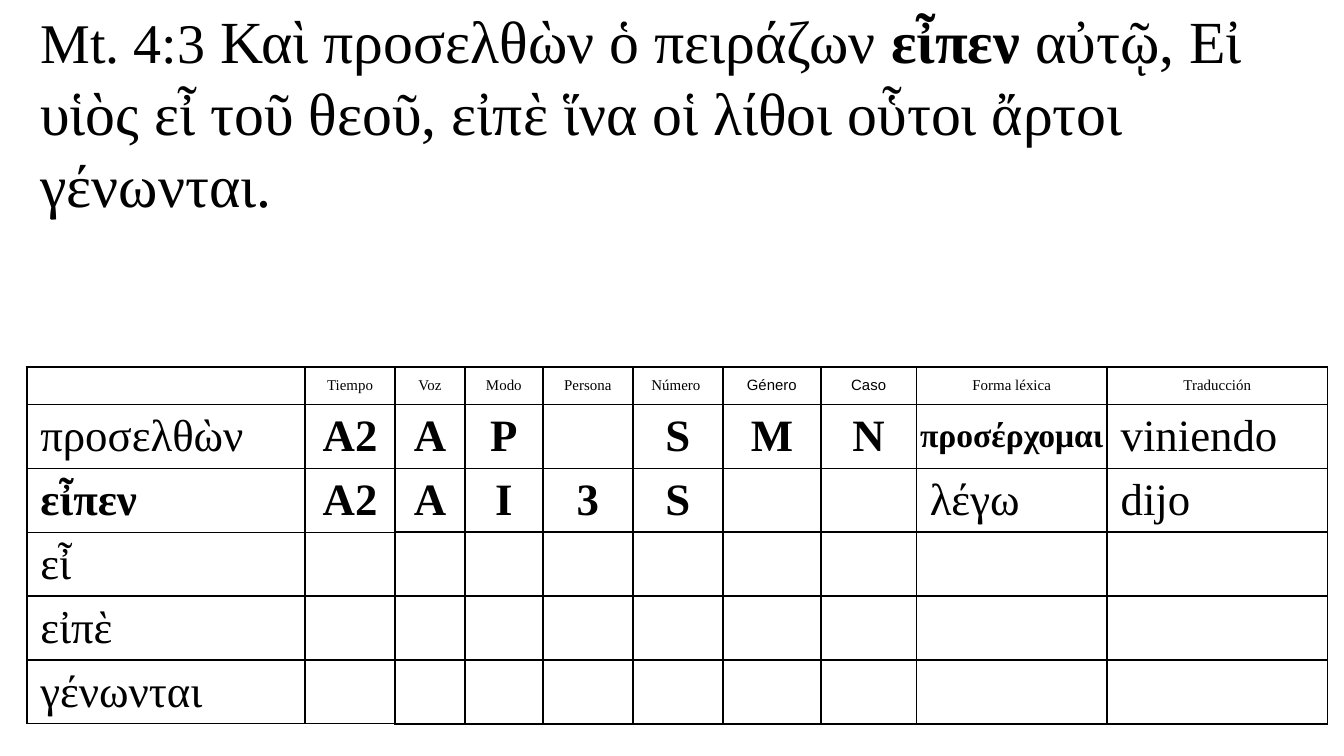
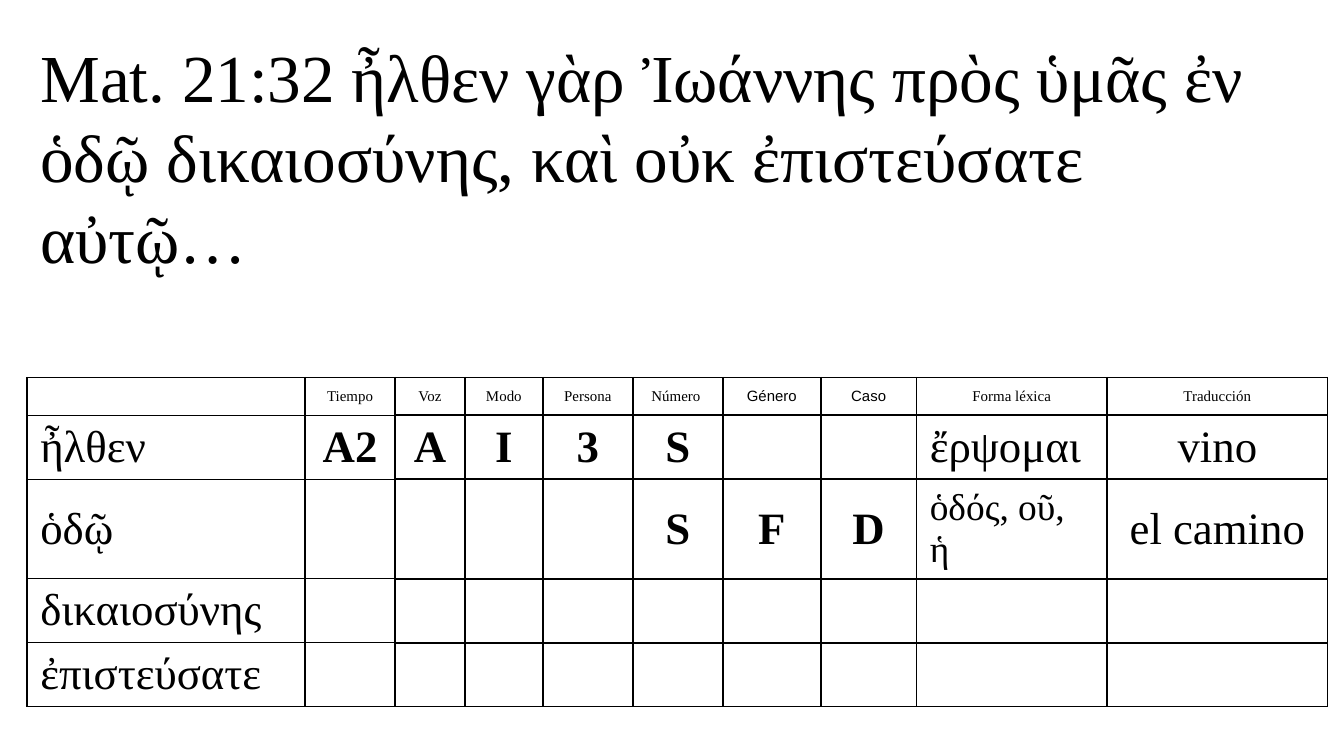
import pptx
import pptx.dml.color
import pptx.enum.text
import pptx.util
from lxml import etree
from pptx.enum.text import MSO_ANCHOR, MSO_AUTO_SIZE, PP_ALIGN
from pptx.util import Inches, Pt

SERIF, SANS = "Times New Roman", "Arial"
BLACK = "000000"
NAMESPACE = "{http://schemas.openxmlformats.org/drawingml/2006/main}"
COLUMN_WIDTHS = [2.07, 0.67, 0.52, 0.58, 0.67, 0.67, 0.73, 0.71, 1.42, 1.64]
HEADINGS = ["", "Tiempo", "Voz", "Modo", "Persona", "Número ", "Género", "Caso",
            "Forma léxica", "Traducción"]
SANS_HEADINGS = ["Género", "Caso"]
PARSING_COLUMNS = range(1, 8)
TRANSLATION = 9
TIGHT_WORD = "προσέρχομαι "
BOLD_WORDS = ["εἶπεν", TIGHT_WORD]
WORD_SIZES = {TIGHT_WORD: 18, "ὁδός, οῦ, ἡ": 20}

# Verse spans are (text, size, bold); each table row has one entry per column.
verses = [
    {
        "top": -0.02, "height": 1.72,
        "spans": [
            ("Mt. 4:3", 30, False),
            (" Καὶ προσελθὼν ὁ πειράζων ", 32, False),
            ("εἶπεν", 32, True),
            (" αὐτῷ, Εἰ υἱὸς εἶ τοῦ θεοῦ, εἰπὲ ἵνα οἱ λίθοι οὗτοι ἄρτοι γένωνται.",
             32, False),
        ],
        "table_top": 2.73, "table_height": 2.65,
        "row_heights": [0.28, 0.45, 0.43, 0.43, 0.43, 0.43],
        "translation_align": PP_ALIGN.LEFT,
        "words": [
            ["προσελθὼν", "A2", "A", "P", "", "S", "M", "N", TIGHT_WORD, "viniendo"],
            ["εἶπεν", "A2", "A", "I", "3", "S", "", "", "λέγω", "dijo"],
            ["εἶ"] + [""] * 9,
            ["εἰπὲ"] + [""] * 9,
            ["γένωνται"] + [""] * 9,
        ],
    },
    {
        "top": 0.21, "height": 1.31,
        "spans": [
            ("Mat. 21:32 ἦλθεν γὰρ Ἰωάννης πρὸς ὑμᾶς ἐν ὁδῷ δικαιοσύνης, "
             "καὶ οὐκ ἐπιστεύσατε αὐτῷ…", 36, False),
        ],
        "table_top": 2.81, "table_height": 2.17,
        "row_heights": [0.28, 0.45, 0.45, 0.43, 0.43],
        "translation_align": PP_ALIGN.CENTER,
        "words": [
            ["ἦλθεν", "A2", "A", "I", "3", "S", "", "", "ἔρψομαι", "vino"],
            ["ὁδῷ", "", "", "", "", "S", "F", "D", "ὁδός, οῦ, ἡ", "el camino"],
            ["δικαιοσύνης"] + [""] * 9,
            ["ἐπιστεύσατε"] + [""] * 9,
        ],
    },
]


def format_span(span, size, bold=False, font=SERIF, color=BLACK):
    span.font.name = font
    span.font.size = Pt(size)
    span.font.bold = bold
    span.font.color.rgb = pptx.dml.color.RGBColor.from_string(color)


def add_border(cell, side, width, color=BLACK):
    """Draw one side (L, R, T or B) of a cell; call before setting its fill."""
    properties = cell._tc.get_or_add_tcPr()
    line = etree.SubElement(properties, NAMESPACE + "ln" + side, w=str(int(Pt(width))))
    fill = etree.SubElement(line, NAMESPACE + "solidFill")
    etree.SubElement(fill, NAMESPACE + "srgbClr", val=color)


deck = pptx.Presentation()
deck.slide_width = Inches(10)
deck.slide_height = Inches(10) * 9 // 16

for verse in verses:
    page = deck.slides.add_slide(deck.slide_layouts[5])

    box = page.shapes.title
    box.left, box.top = Inches(0.2), Inches(verse["top"])
    box.width, box.height = Inches(9.61), Inches(verse["height"])
    frame = box.text_frame
    frame.word_wrap = True
    frame.auto_size = MSO_AUTO_SIZE.SHAPE_TO_FIT_TEXT
    frame.vertical_anchor = MSO_ANCHOR.TOP
    para = frame.paragraphs[0]
    para.alignment = PP_ALIGN.LEFT
    for text, size, bold in verse["spans"]:
        span = para.add_run()
        span.text = text
        format_span(span, size, bold)

    rows = [HEADINGS] + verse["words"]
    holder = page.shapes.add_table(
        len(rows), len(COLUMN_WIDTHS), Inches(0.2), Inches(verse["table_top"]),
        Inches(sum(COLUMN_WIDTHS)), Inches(verse["table_height"]))
    table = holder.table
    table.first_row = False
    table.horz_banding = False
    for column, width in zip(table.columns, COLUMN_WIDTHS):
        column.width = Inches(width)
    for row, height in zip(table.rows, verse["row_heights"]):
        row.height = Inches(height)
    holder.height = Inches(verse["table_height"])

    for row_index, texts in enumerate(rows):
        is_heading = row_index == 0
        for column_index, text in enumerate(texts):
            cell = table.cell(row_index, column_index)
            is_parsing = column_index in PARSING_COLUMNS
            inner_width = 0.75 if column_index < 2 else 1
            add_border(cell, "L", 1)
            add_border(cell, "R", 1)
            add_border(cell, "T", 1 if is_heading else inner_width)
            add_border(cell, "B", inner_width)
            cell.fill.background()
            cell.vertical_anchor = MSO_ANCHOR.MIDDLE
            cell.margin_left = cell.margin_right = Inches(0 if text == TIGHT_WORD else 0.1)
            cell.margin_top = cell.margin_bottom = Pt(2.7)

            para = cell.text_frame.paragraphs[0]
            if not text:
                etree.SubElement(para._p, NAMESPACE + "endParaRPr",
                                 sz="800" if is_heading else "1800")
                continue
            para.text = text
            if is_heading or is_parsing or text == TIGHT_WORD:
                para.alignment = PP_ALIGN.CENTER
            elif column_index == TRANSLATION:
                para.alignment = verse["translation_align"]
            else:
                para.alignment = PP_ALIGN.LEFT
            if is_heading:
                font = SANS if text in SANS_HEADINGS else SERIF
                format_span(para.runs[0], 8, font=font)
            else:
                format_span(para.runs[0], WORD_SIZES.get(text, 24),
                            is_parsing or text in BOLD_WORDS)

deck.save("out.pptx")
